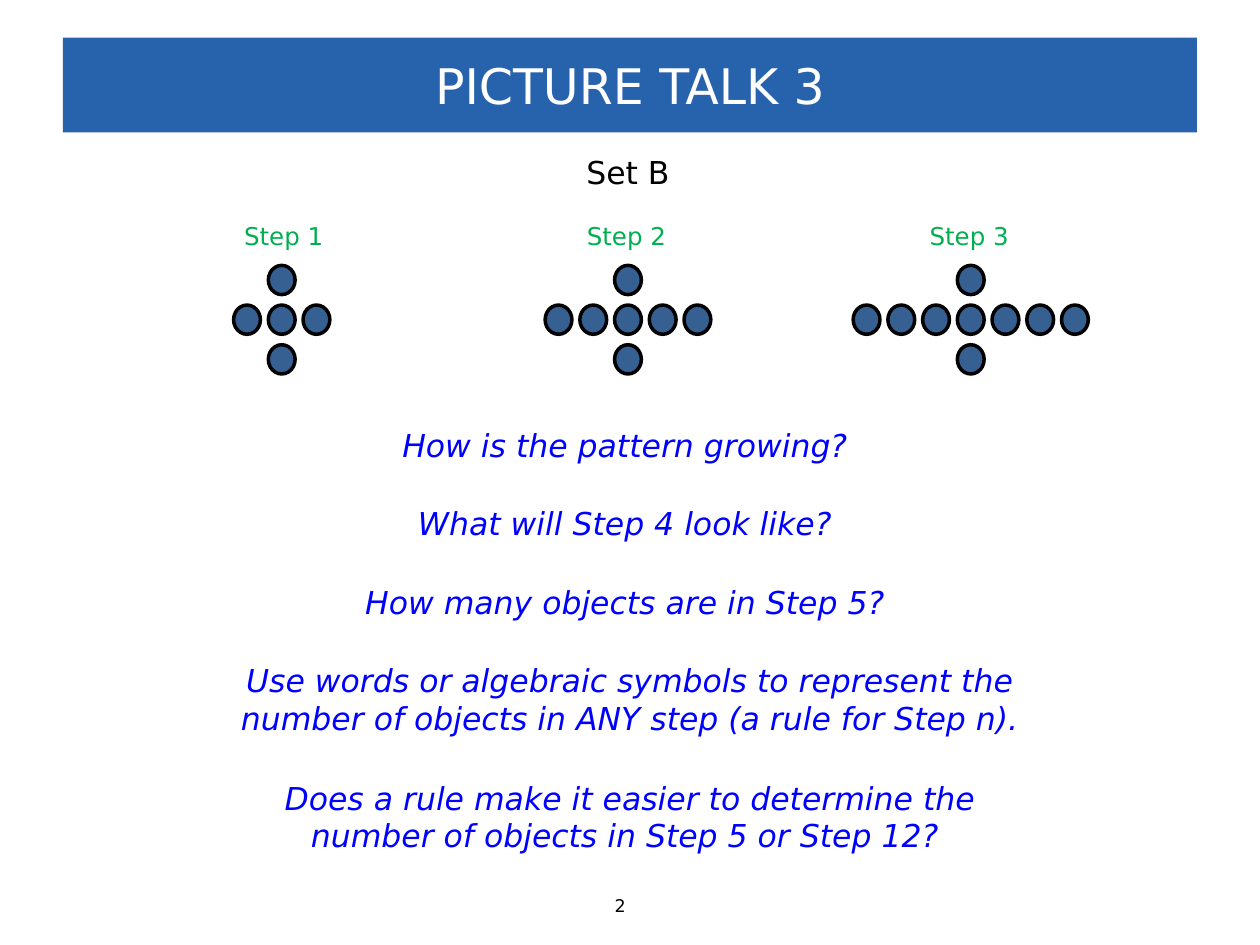
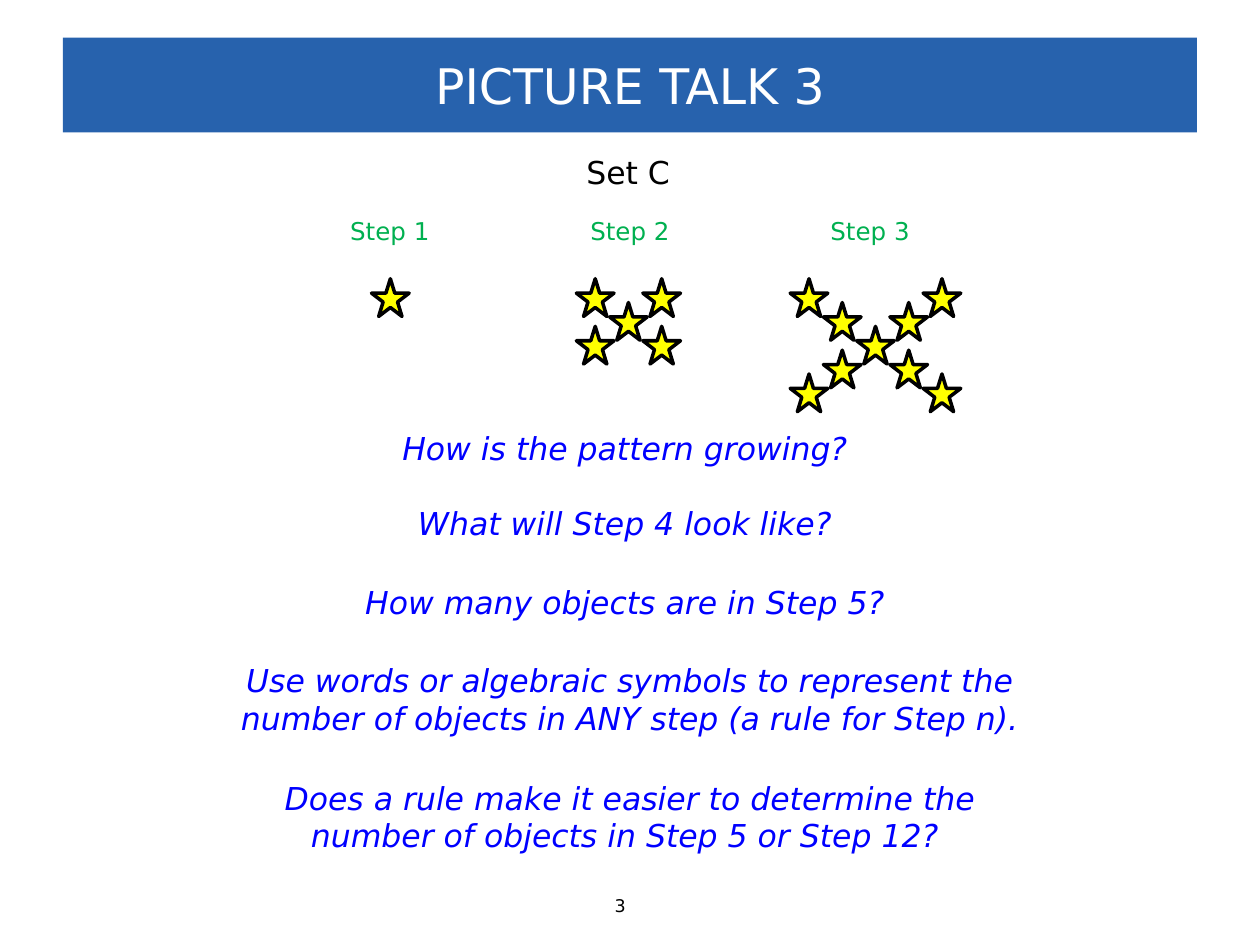
"""Build the two pattern slides of Picture Talk 3."""
from pptx import Presentation
from pptx.dml.color import RGBColor
from pptx.enum.shapes import MSO_SHAPE as Shape
from pptx.enum.text import MSO_ANCHOR as Anchor, PP_ALIGN as Align
from pptx.util import Cm, Pt

FONT = "DejaVu Sans"
BAND_BLUE = RGBColor(0x27, 0x62, 0xAD)
QUESTION_BLUE = RGBColor(0x00, 0x00, 0xFF)
DOT_BLUE = RGBColor(0x37, 0x60, 0x92)
STEP_GREEN = RGBColor(0x00, 0xB0, 0x50)
YELLOW = RGBColor(0xFF, 0xFF, 0x00)
BLACK = RGBColor(0x00, 0x00, 0x00)
WHITE = RGBColor(0xFF, 0xFF, 0xFF)

SLIDE_WIDTH, SLIDE_HEIGHT = 25.4, 19.05
DOT_WIDTH, DOT_HEIGHT = 0.54, 0.59
DOT_PITCH_X, DOT_PITCH_Y = 0.7, 0.8
STAR_SIZE = 0.76
STAR_PITCH_X, STAR_PITCH_Y = 0.67, 0.48

FIRST_QUESTION = "How is the pattern growing? "
LATER_QUESTIONS = [
    ("What will Step 4 look like? ", 10.03, 9.63, 1.02),
    ("How many objects are in Step 5? ", 11.63, 11.35, 1.02),
    ("Use words or algebraic symbols to represent the number of objects "
     "in ANY step (a rule for Step n).", 13.21, 17.02, 1.8),
    ("Does a rule make it easier to determine the number of objects "
     "in Step 5 or Step 12? ", 15.57, 14.81, 1.8),
]


def write_text(shape, text, size=18, color=BLACK, italic=False,
               align=Align.LEFT, anchor=Anchor.TOP, wrap=True):
    """Fill a shape with one formatted paragraph."""
    frame = shape.text_frame
    frame.word_wrap = wrap
    frame.vertical_anchor = anchor
    paragraph = frame.paragraphs[0]
    paragraph.alignment = align
    run = paragraph.add_run()
    run.text = text
    run.font.name = FONT
    run.font.size = Pt(size)
    run.font.italic = italic
    run.font.color.rgb = color


def add_text(slide, text, left, top, width, height, **text_format):
    """Add a text box, measured in centimetres."""
    box = slide.shapes.add_textbox(Cm(left), Cm(top), Cm(width), Cm(height))
    write_text(box, text, **text_format)


def add_figure(slide, kind, left, top, width, height, fill, outline=None):
    """Add a flat preset shape, measured in centimetres."""
    figure = slide.shapes.add_shape(kind, Cm(left), Cm(top), Cm(width), Cm(height))
    figure.shadow.inherit = False
    figure.fill.solid()
    figure.fill.fore_color.rgb = fill
    if outline is None:
        figure.line.fill.background()
    else:
        figure.line.color.rgb = outline
        figure.line.width = Pt(2)
    return figure


def add_question(slide, text, top, width, height):
    """Add an italic question centred on the slide."""
    add_text(slide, text, (SLIDE_WIDTH - width) / 2, top, width, height,
             color=QUESTION_BLUE, italic=True, align=Align.CENTER)


def add_step_labels(slide, lefts, top):
    """Label the three steps of the pattern."""
    for step, left in enumerate(lefts, start=1):
        add_text(slide, f"Step {step}", left, top, 2.24, 0.86,
                 size=14, color=STEP_GREEN)


def add_dot_cross(slide, step, left, top):
    """Draw a cross whose horizontal arms have one dot per step."""
    row = [(column, 0) for column in range(-step, step + 1)]
    for column, line in row + [(0, -1), (0, 1)]:
        add_figure(slide, Shape.OVAL, left + column * DOT_PITCH_X,
                   top + line * DOT_PITCH_Y, DOT_WIDTH, DOT_HEIGHT,
                   DOT_BLUE, outline=BLACK)


def add_star_cross(slide, step, left, top):
    """Draw a diagonal cross of stars hanging from a fixed top."""
    reach = step - 1
    middle = top + reach * STAR_PITCH_Y
    for column in range(-reach, reach + 1):
        for line in {column, -column}:
            add_figure(slide, Shape.STAR_5_POINT, left + column * STAR_PITCH_X,
                       middle + line * STAR_PITCH_Y, STAR_SIZE, STAR_SIZE,
                       YELLOW, outline=BLACK)


def add_pattern_slide(presentation, number, set_name, question_top):
    """Add a slide with the shared title, set name, questions and number."""
    slide = presentation.slides.add_slide(presentation.slide_layouts[6])
    band = add_figure(slide, Shape.RECTANGLE, 1.27, 0.76, 22.86, 1.91, BAND_BLUE)
    write_text(band, "PICTURE TALK 3", size=28, color=WHITE,
               align=Align.CENTER, anchor=Anchor.MIDDLE)
    add_text(slide, set_name, 11.57, 2.97, 2.26, 1.02, wrap=False)
    add_question(slide, FIRST_QUESTION, question_top, 10.34, 1.02)
    for question in LATER_QUESTIONS:
        add_question(slide, *question)
    add_text(slide, str(number), 12.14, 17.91, 1.12, 0.69, size=10, wrap=False)
    return slide


def main():
    """Build and save the presentation."""
    presentation = Presentation()
    presentation.slide_width = Cm(SLIDE_WIDTH)
    presentation.slide_height = Cm(SLIDE_HEIGHT)

    dots = add_pattern_slide(presentation, 2, "Set B", 8.46)
    for step, left in enumerate((5.41, 12.39, 19.3), start=1):
        add_dot_cross(dots, step, left, 6.15)
    add_step_labels(dots, (4.67, 11.58, 18.49), 4.34)

    stars = add_pattern_slide(presentation, 3, "Set C", 8.53)
    for step, left in enumerate((7.49, 12.29, 17.27), start=1):
        add_star_cross(stars, step, left, 5.62)
    add_step_labels(stars, (6.81, 11.65, 16.49), 4.24)

    presentation.save("out.pptx")


if __name__ == "__main__":
    main()
